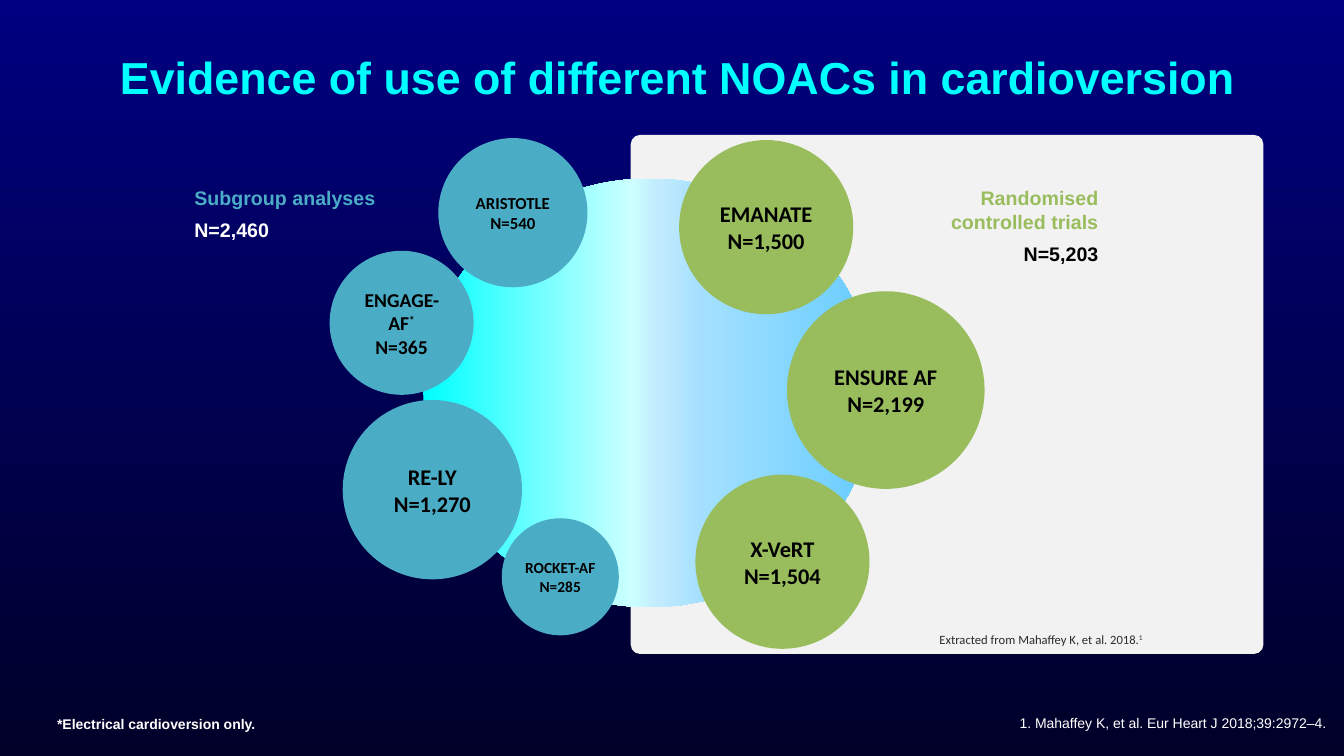
"""Build the slide on NOAC evidence in cardioversion."""
from lxml.etree import SubElement
from pptx import Presentation
from pptx.dml.color import RGBColor
from pptx.enum.shapes import MSO_SHAPE as Preset
from pptx.enum.text import MSO_ANCHOR as Anchor, PP_ALIGN as Align
from pptx.oxml.ns import qn
from pptx.util import Cm, Pt

COLOURS = {
    "night_top": "000080", "night_bottom": "000028", "title": "00FFFF",
    "panel": "F2F2F2", "trial": "99BD5D", "subgroup": "4BACC6",
    "white": "FFFFFF", "black": "000000", "source": "2A2B2D",
}
HUB_STOPS = [(0, "00FFFF"), (46, "CCFFFF"), (52, "C2EBFF"), (62, "A3E0FF"), (100, "66CCFF")]
STUDIES = [
    ("EMANATE", "1,500", "trial", 17.12, 3.53, 4.39, 16, 0.1),
    ("ENSURE AF", "2,199", "trial", 19.84, 7.34, 4.98, 16, 0.25),
    ("X-VeRT", "1,504", "trial", 17.53, 11.96, 4.39, 16, 0.1),
    ("ARISTOTLE", "540", "subgroup", 11.05, 3.48, 3.76, 12, 0.1),
    ("ENGAGE-AF", "365", "subgroup", 8.31, 6.32, 3.63, 14, 0.1),
    ("RE-LY", "1,270", "subgroup", 8.64, 10.08, 4.52, 16, 0.1),
    ("ROCKET-AF", "285", "subgroup", 12.65, 13.06, 2.95, 11, 0),
]


def paint_gradient(fill, owner, stops, angle):
    """Fill with a linear gradient of any number of stops."""
    fill.gradient()
    fill.gradient_angle = angle
    stop_list = next(owner.iter(qn("a:gsLst")))
    for preset_stop in list(stop_list):
        stop_list.remove(preset_stop)
    for percent, colour in stops:
        stop = SubElement(stop_list, qn("a:gs"), pos=str(percent * 1000))
        SubElement(stop, qn("a:srgbClr"), val=colour)


def add_superscript(paragraph, mark):
    """Append a raised mark to a paragraph."""
    run = paragraph.add_run()
    run.text = mark
    run.font._element.set("baseline", "30000")


def style_text(paragraphs, size, colour, font="Arial", bold=True, align=Align.LEFT):
    """Give every run of the paragraphs the same look."""
    for paragraph in paragraphs:
        paragraph.alignment = align
        for run in paragraph.runs:
            run.font.name, run.font.size, run.font.bold = font, Pt(size), bold
            run.font.color.rgb = RGBColor.from_string(COLOURS[colour])


def add_text(slide, text, box, size, colour, **look):
    """Add a wrapping text box and return its frame."""
    frame = slide.shapes.add_textbox(*map(Cm, box)).text_frame
    frame.word_wrap = True
    frame.text = text
    style_text(frame.paragraphs, size, colour, **look)
    return frame


def add_form(slide, preset, box, colour=None):
    """Add a flat shape without outline."""
    form = slide.shapes.add_shape(preset, *map(Cm, box))
    form.shadow.inherit = False
    form.line.fill.background()
    if colour:
        form.fill.solid()
        form.fill.fore_color.rgb = RGBColor.from_string(COLOURS[colour])
    return form


def add_study(slide, name, patients, group, left, top, diameter, size, inset):
    """Add a study circle with its name and patient count."""
    circle = add_form(slide, Preset.OVAL, (left, top, diameter, diameter), group)
    frame = circle.text_frame
    frame.word_wrap = True
    frame.vertical_anchor = Anchor.MIDDLE
    frame.margin_left = frame.margin_right = Cm(inset)
    frame.text = f"{name}\nN={patients}"
    if name == "ENGAGE-AF":
        add_superscript(frame.paragraphs[0], "*")
    style_text(frame.paragraphs, size, "black", "Calibri", align=Align.CENTER)


def add_group_label(slide, heading, total, box, colours, align):
    """Add a study group heading with its patient total."""
    frame = add_text(slide, f"{heading}\n{total}", box, 14, colours[0], align=align)
    for paragraph in frame.paragraphs:
        paragraph.space_after = Pt(5.9)
    style_text(frame.paragraphs[1:], 14, colours[1], align=align)


def add_source(slide):
    """Add the source line inside the panel."""
    frame = add_text(slide, "Extracted from Mahaffey K, et al. 2018.",
                     (22.5, 15.88, 6.43, 0.51), 9, "source")
    frame.vertical_anchor = Anchor.BOTTOM
    frame.margin_left = frame.margin_right = Cm(0.13)
    frame.margin_top = frame.margin_bottom = Cm(0.08)
    add_superscript(frame.paragraphs[0], "1")
    style_text(frame.paragraphs, 9, "source", "Calibri", False, Align.RIGHT)


def main():
    """Assemble and save the slide."""
    deck = Presentation()
    deck.slide_width, deck.slide_height = Cm(33.88), Cm(19.05)
    slide = deck.slides.add_slide(deck.slide_layouts[6])
    night = [(0, COLOURS["night_top"]), (100, COLOURS["night_bottom"])]
    paint_gradient(slide.background.fill, slide.element, night, 270)

    add_text(slide, "1. Mahaffey K, et al. Eur Heart J 2018;39:2972–4.",
             (22.63, 17.88, 11.05, 0.69), 10, "white", bold=False, align=Align.RIGHT)
    add_text(slide, "*Electrical cardioversion only.", (1.19, 17.9, 6.65, 0.69), 10, "white")

    panel = add_form(slide, Preset.ROUNDED_RECTANGLE, (15.9, 3.4, 15.95, 13.08), "panel")
    panel.adjustments[0] = 0.018
    hub = add_form(slide, Preset.OVAL, (10.67, 4.5, 11.4, 10.8))
    paint_gradient(hub.fill, hub.element, HUB_STOPS, 0)
    add_source(slide)
    for study in STUDIES:
        add_study(slide, *study)

    add_group_label(slide, "Randomised controlled trials", "N=5,203",
                    (22.5, 4.57, 5.44, 2.26), ("trial", "black"), Align.RIGHT)
    add_group_label(slide, "Subgroup analyses", "N=2,460",
                    (4.65, 4.57, 5.84, 1.68), ("subgroup", "white"), Align.LEFT)
    add_text(slide, "Evidence of use of different NOACs in cardioversion",
             (1.83, 1.12, 30.53, 1.68), 32, "title", align=Align.CENTER)
    deck.save("out.pptx")


if __name__ == "__main__":
    main()
